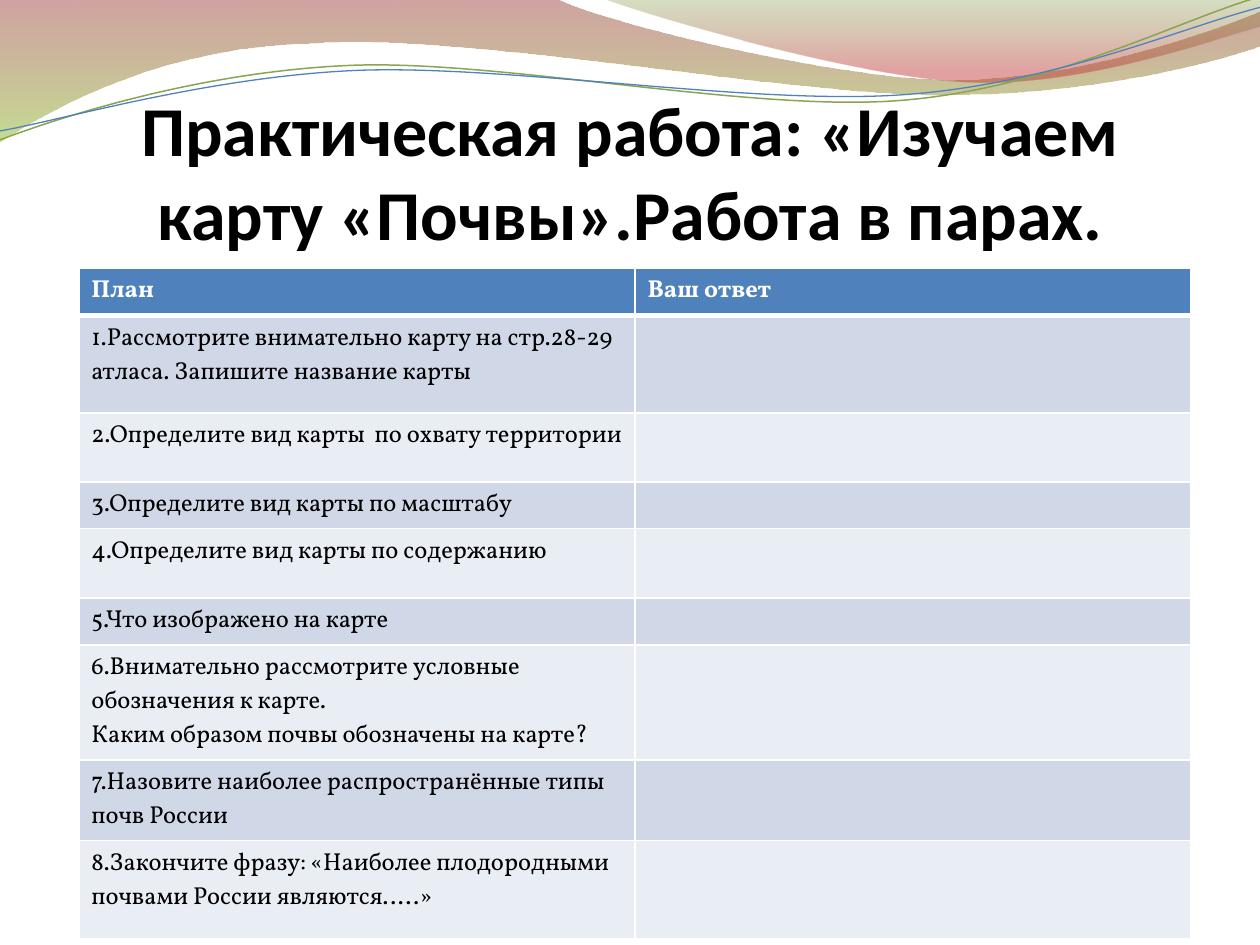
from lxml.etree import SubElement
from pptx import Presentation
from pptx.dml.color import RGBColor
from pptx.enum.text import MSO_ANCHOR, PP_ALIGN
from pptx.oxml import parse_xml
from pptx.oxml.ns import nsdecls, qn
from pptx.util import Cm, Pt

BANDS = [
    ([(0, 0), (11.21, -0.03), (12.09, 0.43, 16.87, 1.6, 19.25, 1.6),
      (21.67, 1.6, 24.33, 0.66, 25.4, 0.23), (25.43, 0.91),
      (24.97, 1.12, 22.1, 1.93, 18.95, 1.91),
      (15.8, 1.91, 9.7, 0.71, 6.53, 0.86),
      (3.28, 0.91, 1.17, 2.11, -0.03, 2.87), (0, 0)],
     [(0, "973330", 45), (1, "95C238", 55)]),
    ([(12.17, -0.03), (12.93, 0.28, 17.32, 1.57, 19.53, 1.65),
      (21.74, 1.75, 24.41, 0.81, 25.4, 0.53), (25.4, 0), (12.17, -0.03)],
     [(0, "769537", 30), (0.8, "BE3330", 45)]),
]
LINES = [
    ([(0, 2.82), (1.22, 2.36, 4.01, 1.45, 7.04, 1.32),
      (10.03, 1.19, 15.06, 2.26, 18.11, 2.03),
      (21.16, 1.8, 23.83, 0.38, 25.35, -0.05)], "89A54F", 0.85),
    ([(0, 2.64), (1.19, 2.44, 4.17, 1.55, 7.19, 1.42),
      (10.24, 1.3, 15.16, 2.13, 18.21, 1.91),
      (21.23, 1.7, 23.9, 0.53, 25.4, 0.15)], "4F81BD", 0.75),
]
TITLE = "Практическая работа: «Изучаем карту «Почвы».Работа в парах."
ROWS = [
    ("План", 0.95),
    ("1.Рассмотрите внимательно карту на стр.28-29 атласа. Запишите название карты", 1.97),
    ("2.Определите вид карты  по охвату территории", 1.39),
    ("3.Определите вид карты по масштабу", 0.94),
    ("4.Определите вид карты по содержанию", 1.4),
    ("5.Что изображено на карте", 0.94),
    ("6.Внимательно рассмотрите условные обозначения к карте.\n"
     "Каким образом почвы обозначены на карте?", 2.32),
    ("7.Назовите наиболее распространённые типы почв России", 1.63),
    ("8.Закончите фразу: «Наиболее плодородными почвами России являются…..»", 1.97),
]


def hue(code):
    """Turn a hex string into a colour."""
    return RGBColor.from_string(code)


def style(item, form):
    """Set each attribute in form on item."""
    for name, value in form.items():
        setattr(item, name, value)


def curve(slide, box, parts, close):
    """Draw an outline of lines and Bezier arcs in the box."""
    dots = [(Cm(box[0] + x), Cm(box[1] + y))
            for part in parts for x, y in zip(part[::2], part[1::2])]
    pen = slide.shapes.build_freeform(*dots[0])
    pen.add_line_segments(dots[1:], close=close)
    shape = pen.convert_to_shape()
    shape.shadow.inherit = False
    legs = iter(list(shape._element.iter(qn("a:lnTo"))))
    for part in parts[1:]:
        leg = next(legs)
        if len(part) == 6:
            leg.addprevious(parse_xml(f'<a:cubicBezTo {nsdecls("a")}/>'))
            arc = leg.getprevious()
            for old in (leg, next(legs), next(legs)):
                arc.append(old[0])
                old.getparent().remove(old)
    return shape


def waves(slide, box):
    """Draw the tinted bands and thin lines at the top."""
    for parts, stops in BANDS:
        shape = curve(slide, box, parts, True)
        shape.line.fill.background()
        shape.fill.gradient()
        shape.fill.gradient_angle = 270
        for stop, (place, code, _) in zip(shape.fill.gradient_stops, stops):
            stop.color.rgb = hue(code)
            stop.position = place
        tints = shape._element.spPr.iter(qn("a:srgbClr"))
        for tint, (_, _, alpha) in zip(tints, stops):
            SubElement(tint, qn("a:alpha")).set("val", str(alpha * 1000))
    for parts, code, width in LINES:
        shape = curve(slide, box, parts, False)
        shape.fill.background()
        shape.line.color.rgb = hue(code)
        shape.line.width = Pt(width)


def title(slide, box):
    """Write the heading at the foot of the box."""
    frame = slide.shapes.add_textbox(*map(Cm, box)).text_frame
    style(frame, dict(word_wrap=True, vertical_anchor=MSO_ANCHOR.BOTTOM,
                      margin_left=0, margin_right=0, margin_top=Cm(0.13), margin_bottom=0))
    para = frame.paragraphs[0]
    para.alignment = PP_ALIGN.CENTER
    run = para.add_run()
    run.text = TITLE
    style(run.font, dict(name="Calibri", size=Pt(40), bold=True))
    run.font.color.rgb = hue("000000")


def border(cell, widths):
    """Give a cell white edges: left, right, top, bottom."""
    edges = cell._tc.get_or_add_tcPr()
    for spot, (side, width) in enumerate(zip("LRTB", widths)):
        edges.insert(spot, parse_xml(
            f'<a:ln{side} {nsdecls("a")} w="{Pt(width)}"><a:solidFill>'
            f'<a:srgbClr val="FFFFFF"/></a:solidFill></a:ln{side}>'))


def write(cell, text, head):
    """Put text in a cell, or size its empty line."""
    if not text:
        cell.text_frame.paragraphs[0]._p.get_or_add_endParaRPr().set("sz", "1400")
        return
    cell.text = text
    for para in cell.text_frame.paragraphs:
        for run in para.runs:
            style(run.font, dict(name="Vollkorn", size=Pt(14), bold=head))
            run.font.color.rgb = hue("FFFFFF" if head else "000000")


def plan(slide, box):
    """Build the table of tasks and empty answers."""
    tall = sum(height for _, height in ROWS)
    table = slide.shapes.add_table(len(ROWS), 2, *map(Cm, (*box, tall))).table
    for col in table.columns:
        col.width = Cm(box[2] / 2)
    for i, (task, height) in enumerate(ROWS):
        head = i == 0
        table.rows[i].height = Cm(height)
        fill = "4F81BD" if head else ("E9EDF4", "D0D8E8")[i % 2]
        for j, text in enumerate((task, "Ваш ответ" if head else "")):
            cell = table.cell(i, j)
            cell.fill.solid()
            cell.fill.fore_color.rgb = hue(fill)
            border(cell, (1, 1, 3 if i == 1 else 1, 3 if head else 1))
            write(cell, text, head)


def main():
    """Build and save the slide."""
    deck = Presentation()
    style(deck, dict(slide_width=Cm(25.4), slide_height=Cm(19.05)))
    slide = deck.slides.add_slide(deck.slide_layouts[6])
    waves(slide, (0, 0))
    title(slide, (1.27, 1.96, 22.86, 3.17))
    plan(slide, (1.59, 5.41, 22.42))
    deck.save("out.pptx")


if __name__ == "__main__":
    main()
